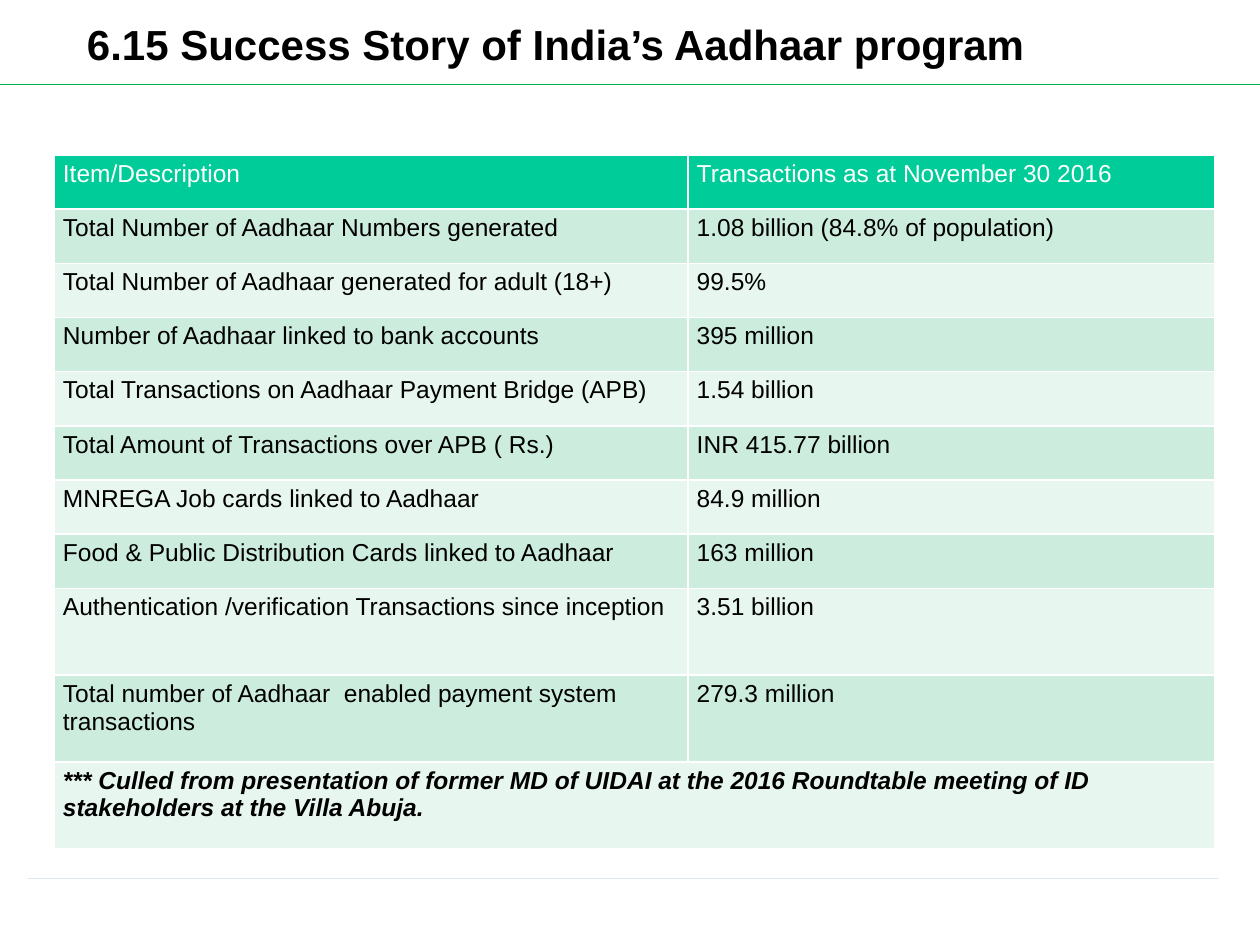
from lxml.etree import SubElement
from pptx import Presentation
from pptx.dml.color import RGBColor
from pptx.enum.shapes import MSO_CONNECTOR
from pptx.enum.text import MSO_ANCHOR, PP_ALIGN
from pptx.oxml.ns import qn
from pptx.util import Inches, Pt

BLACK = RGBColor(0x00, 0x00, 0x00)
WHITE = RGBColor(0xFF, 0xFF, 0xFF)
GREEN = RGBColor(0x00, 0xB0, 0x50)
GREY = RGBColor(0xE0, 0xE6, 0xEE)
TEAL = RGBColor(0x00, 0xCC, 0x99)
BANDS = (RGBColor(0xCC, 0xEC, 0xDE), RGBColor(0xE7, 0xF6, 0xEF))

TITLE = "6.15 Success Story of India’s Aadhaar program"
ROWS = [
    ("Item/Description", "Transactions as at November 30 2016"),
    ("Total Number of Aadhaar Numbers generated", "1.08 billion (84.8% of population)"),
    ("Total Number of Aadhaar generated for adult (18+)", "99.5%"),
    ("Number of Aadhaar linked to bank accounts", "395 million"),
    ("Total Transactions on Aadhaar Payment Bridge (APB)", "1.54 billion"),
    ("Total Amount of Transactions over APB ( Rs.)", "INR 415.77 billion"),
    ("MNREGA Job cards linked to Aadhaar", "84.9 million"),
    ("Food & Public Distribution Cards linked to Aadhaar", "163 million"),
    ("Authentication /verification Transactions since inception", "3.51 billion"),
    ("Total number of Aadhaar  enabled payment system transactions", "279.3 million"),
]
NOTE = ("*** Culled from presentation of former MD of UIDAI at the 2016 "
        "Roundtable meeting of ID stakeholders at the Villa Abuja.")
WIDTHS = (5.03, 4.18)
SHORT, TALL = 0.43, 0.69
TALL_ROWS = 3


def set_font(font, color, **values):
    font.color.rgb = color
    for name, value in {"name": "Arial", **values}.items():
        setattr(font, name, value)


def add_title(slide):
    title = slide.shapes.title
    box = {"left": 0.59, "top": 0.13, "width": 8.46, "height": 0.82}
    for name, value in box.items():
        setattr(title, name, Inches(value))
    frame = title.text_frame
    frame.text = TITLE
    frame.word_wrap = True
    frame.vertical_anchor = MSO_ANCHOR.TOP
    para = frame.paragraphs[0]
    para.alignment = PP_ALIGN.LEFT
    para.line_spacing = 0.93
    set_font(para.runs[0].font, BLACK, size=Pt(24), bold=True)


def add_rule(slide, left, right, top, color, width):
    rule = slide.shapes.add_connector(
        MSO_CONNECTOR.STRAIGHT, Inches(left), Inches(top), Inches(right), Inches(top))
    rule.line.color.rgb = color
    rule.line.width = Pt(width)
    SubElement(rule._element.spPr, qn("a:effectLst"))


def add_edges(cell):
    """Draw white borders; call before filling, as the schema wants lines first."""
    props = cell._tc.get_or_add_tcPr()
    for side in ("lnL", "lnR", "lnT", "lnB"):
        edge = SubElement(props, qn(f"a:{side}"), w=str(Pt(1)))
        fill = SubElement(edge, qn("a:solidFill"))
        SubElement(fill, qn("a:srgbClr"), val=str(WHITE))


def fill_cell(cell, text, back, color, **style):
    margins = {"left": 0.07, "right": 0.07, "top": 0.04, "bottom": 0.04}
    for side, value in margins.items():
        setattr(cell, f"margin_{side}", Inches(value))
    add_edges(cell)
    cell.fill.solid()
    cell.fill.fore_color.rgb = back
    cell.text = text
    set_font(cell.text_frame.paragraphs[0].font, color, size=Pt(14), **style)


def add_grid(slide):
    count = len(ROWS) + 1
    heights = [SHORT] * (count - TALL_ROWS) + [TALL] * TALL_ROWS
    table = slide.shapes.add_table(
        count, len(WIDTHS), Inches(0.43), Inches(1.23),
        Inches(sum(WIDTHS)), Inches(sum(heights))).table
    for col, width in zip(table.columns, WIDTHS):
        col.width = Inches(width)
    for row, height in zip(table.rows, heights):
        row.height = Inches(height)

    last = count - 1
    table.cell(last, 0).merge(table.cell(last, 1))
    for i, texts in enumerate(ROWS + [(NOTE, "")]):
        back, color = (BANDS[(i - 1) % 2], BLACK) if i else (TEAL, WHITE)
        strong = i == last
        for j, text in enumerate(texts):
            fill_cell(table.cell(i, j), text, back, color, bold=strong, italic=strong)


def main():
    deck = Presentation()
    deck.slide_width, deck.slide_height = Inches(10), Inches(7.5)
    slide = deck.slides.add_slide(deck.slide_layouts[5])
    add_rule(slide, 0, 10, 0.67, GREEN, 0.75)
    add_rule(slide, 0.22, 9.67, 6.97, GREY, 0.25)
    add_title(slide)
    add_grid(slide)
    deck.save("out.pptx")


if __name__ == "__main__":
    main()
